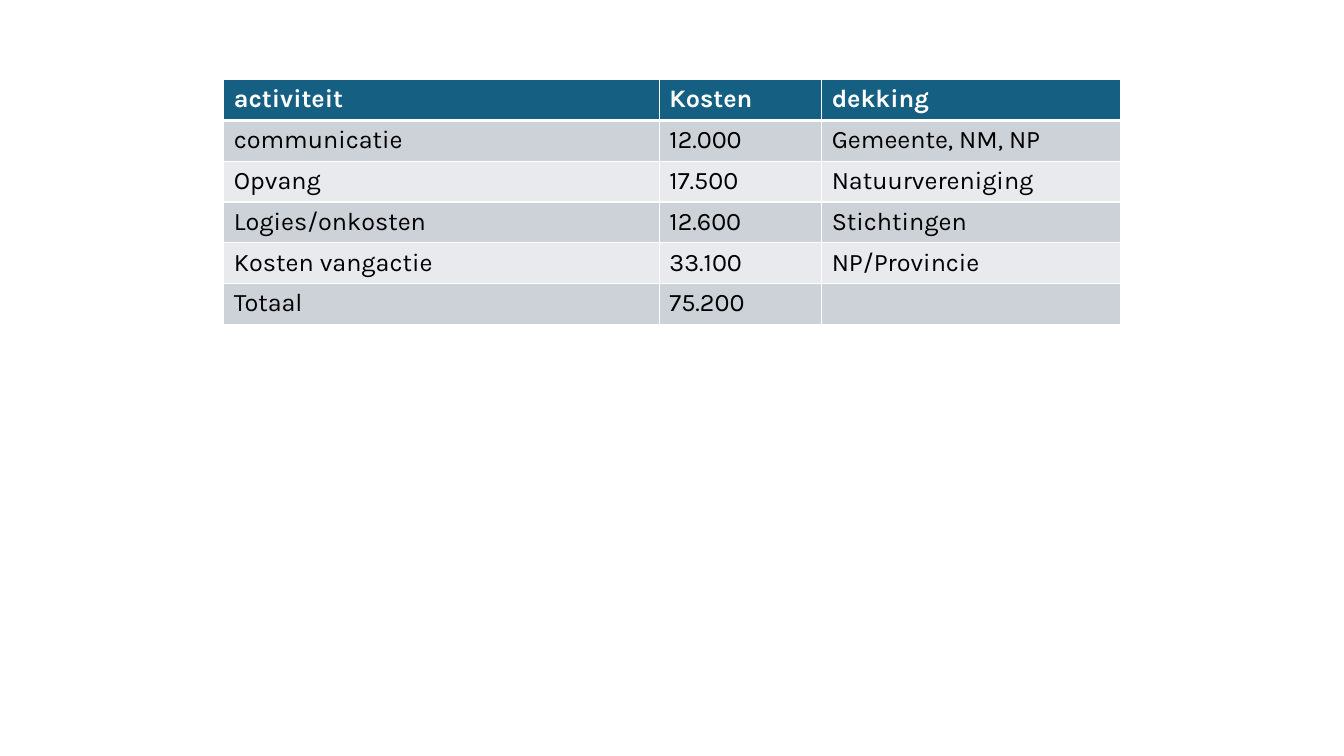
"""Build a slide with a table of activities, their costs and their funding."""
from lxml import etree
from pptx import Presentation
from pptx.dml.color import RGBColor
from pptx.oxml.ns import qn
from pptx.util import Inches, Pt

BUDGET = [
    ("activiteit", "Kosten", "dekking"),
    ("communicatie", "12.000", "Gemeente, NM, NP"),
    ("Opvang", "17.500", "Natuurvereniging"),
    ("Logies/onkosten", "12.600", "Stichtingen"),
    ("Kosten vangactie", "33.100", "NP/Provincie"),
    ("Totaal", "75.200", ""),
]
COLORS = {
    "header": "156082",
    "odd": "CCD2D8",
    "even": "E8EAED",
    "border": "FFFFFF",
    "header_text": "FFFFFF",
    "body_text": "000000",
}
FONT, FONT_SIZE = "Karla", 18
SLIDE_WIDTH, SLIDE_HEIGHT = 13.33, 7.5
COLUMN_WIDTHS = (4.32, 1.61, 2.96)
TOP, TABLE_HEIGHT = 0.79, 2.43
THIN, THICK = 1, 3


def add_border(cell, side, points):
    line = etree.SubElement(
        cell._tc.get_or_add_tcPr(), qn(f"a:ln{side}"), w=str(Pt(points))
    )
    fill = etree.SubElement(line, qn("a:solidFill"))
    etree.SubElement(fill, qn("a:srgbClr"), val=COLORS["border"])


def style_cell(cell, text, row):
    is_header = row == 0
    for side in "LRTB":
        thick = (is_header and side == "B") or (row == 1 and side == "T")
        add_border(cell, side, THICK if thick else THIN)
    band = "header" if is_header else ("even", "odd")[row % 2]
    cell.fill.solid()
    cell.fill.fore_color.rgb = RGBColor.from_string(COLORS[band])
    cell.text = text
    font = cell.text_frame.paragraphs[0].font
    font.name, font.size, font.bold = FONT, Pt(FONT_SIZE), is_header
    ink = "header_text" if is_header else "body_text"
    font.color.rgb = RGBColor.from_string(COLORS[ink])


def main():
    deck = Presentation()
    deck.slide_width, deck.slide_height = Inches(SLIDE_WIDTH), Inches(SLIDE_HEIGHT)
    slide = deck.slides.add_slide(deck.slide_layouts[6])
    width = sum(COLUMN_WIDTHS)
    budget = slide.shapes.add_table(
        len(BUDGET), len(COLUMN_WIDTHS),
        Inches((SLIDE_WIDTH - width) / 2), Inches(TOP),
        Inches(width), Inches(TABLE_HEIGHT),
    ).table
    for column, column_width in zip(budget.columns, COLUMN_WIDTHS):
        column.width = Inches(column_width)
    for row, entries in enumerate(BUDGET):
        for column, text in enumerate(entries):
            style_cell(budget.cell(row, column), text, row)
    deck.save("out.pptx")


if __name__ == "__main__":
    main()
